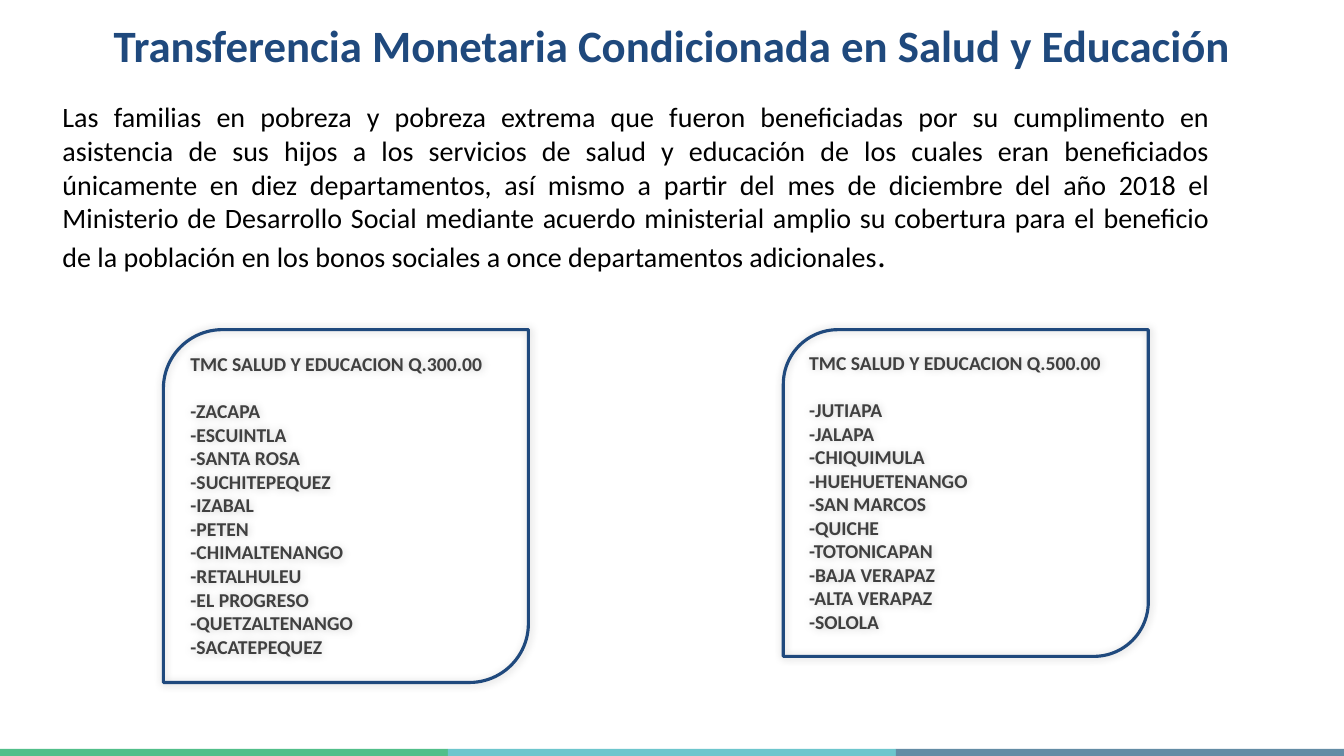
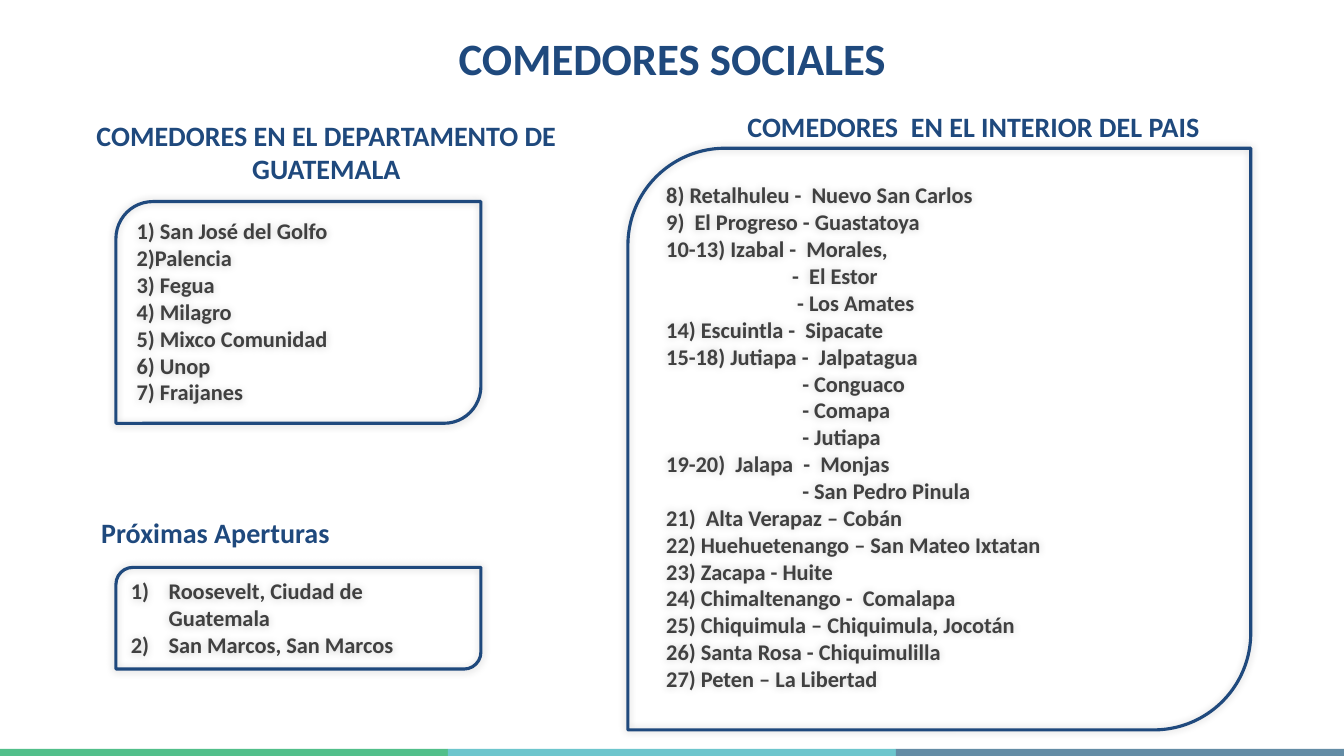
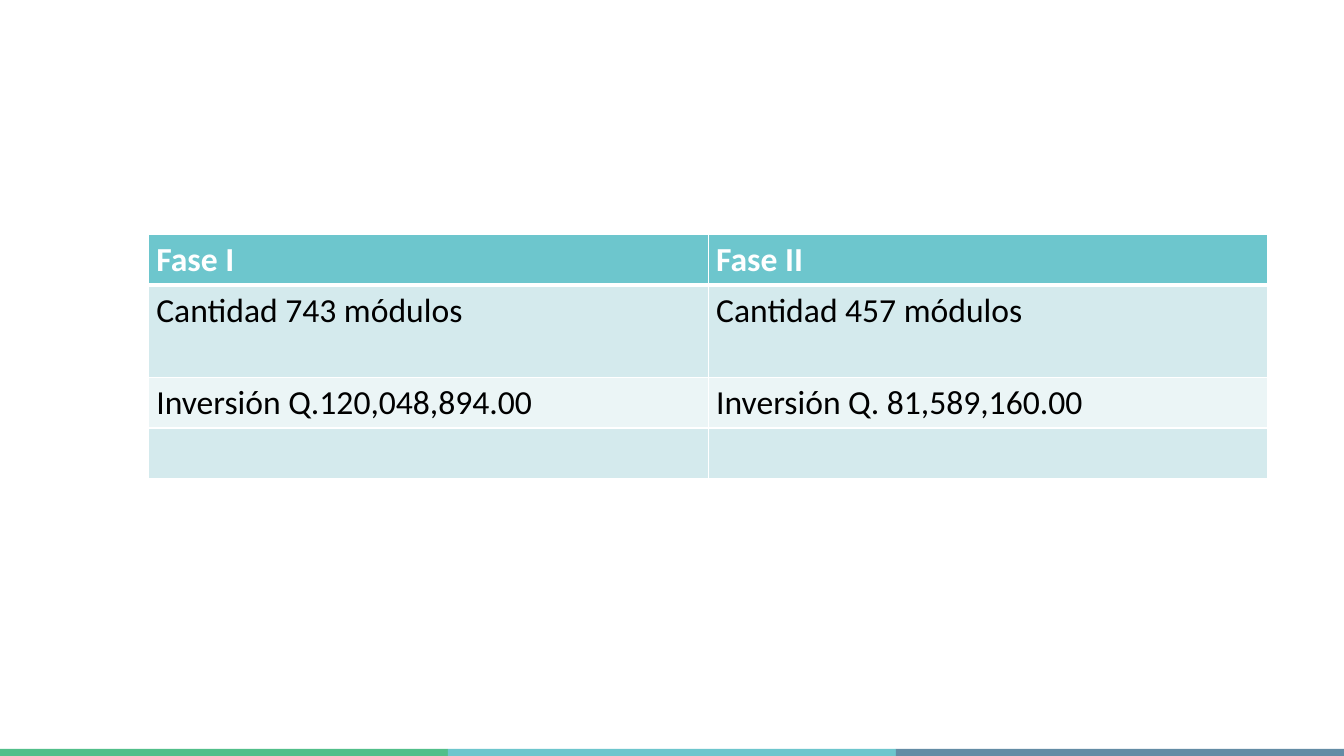
import dataclasses

import pptx
import pptx.dml.color
import pptx.enum.shapes
import pptx.enum.text
import pptx.oxml
import pptx.oxml.ns
import pptx.util
from lxml import etree

ALIGN = pptx.enum.text.PP_ALIGN
ANCHOR = pptx.enum.text.MSO_ANCHOR
SHAPE = pptx.enum.shapes.MSO_SHAPE
COLUMNS, ROWS = 32, 18
WIDTH, HEIGHT = pptx.util.Inches(13.33), pptx.util.Inches(7.5)


@dataclasses.dataclass(frozen=True)
class Theme:
    font: str = "Calibri"
    navy: str = "1F497D"
    grey: str = "404040"
    black: str = "000000"
    white: str = "FFFFFF"
    teal: str = "6DC6CD"
    bands: tuple = ("52BF8A", "6DC6CD", "638CA5")
    table_rows: tuple = ("D4EAED", "EBF5F6")
    title: int = 32
    table: int = 24
    body: int = 20
    item: int = 16
    small_item: int = 14
    outline: float = 2.25


def rgb(color):
    return pptx.dml.color.RGBColor.from_string(color)


def across(columns):
    return round(columns * WIDTH / COLUMNS)


def down(rows):
    return round(rows * HEIGHT / ROWS)


def place(left, top, width, height):
    return across(left), down(top), across(width), down(height)


def add_child(parent, tag, **attributes):
    child = etree.SubElement(parent, pptx.oxml.ns.qn(tag))
    for name, value in attributes.items():
        child.set(name, str(value))
    return child


def next_para(frame):
    """Return the first paragraph while it is unused, else a new one."""
    return frame.add_paragraph() if frame.text else frame.paragraphs[0]


class Deck:
    def __init__(self, theme):
        self.theme = theme
        self.file = pptx.Presentation()
        self.file.slide_width, self.file.slide_height = WIDTH, HEIGHT
        self.page = None

    def add_text(self, para, text, size, color, bold=False, align=ALIGN.LEFT):
        para.alignment = align
        span = para.add_run()
        span.text = text
        span.font.name = self.theme.font
        span.font.size = pptx.util.Pt(size)
        span.font.bold = bold
        span.font.color.rgb = rgb(color)

    def new_page(self):
        self.page = self.file.slides.add_slide(self.file.slide_layouts[6])
        band_width = COLUMNS / len(self.theme.bands)
        for number, color in enumerate(self.theme.bands):
            band = self.page.shapes.add_shape(
                SHAPE.RECTANGLE, *place(number * band_width, 17.83, band_width, 0.17))
            band.shadow.inherit = False
            band.fill.solid()
            band.fill.fore_color.rgb = rgb(color)
            band.line.fill.background()

    def text_box(self, *area):
        frame = self.page.shapes.add_textbox(*place(*area)).text_frame
        frame.word_wrap = True
        return frame

    def heading(self, text, *area, size=None):
        frame = self.text_box(*area)
        frame.vertical_anchor = ANCHOR.MIDDLE
        frame.margin_left = frame.margin_right = 0
        frame.margin_top = frame.margin_bottom = 0
        self.add_text(frame.paragraphs[0], text, size or self.theme.body,
                      self.theme.navy, bold=True, align=ALIGN.CENTER)

    def title(self, text, height):
        self.heading(text, 0.7, 0.67, 30.62, height, size=self.theme.title)

    def body(self, text, ending, *area):
        """Justified paragraph whose ending is set larger."""
        para = self.text_box(*area).paragraphs[0]
        for part, size in ((text, self.theme.body), (ending, self.theme.table)):
            self.add_text(para, part, size, self.theme.black, align=ALIGN.JUSTIFY)

    def card(self, items, *area, size=None, numbered=False, lead=None):
        """Outlined list; an item may be a pair of text and indent in columns."""
        card = self.page.shapes.add_shape(
            SHAPE.ROUND_2_DIAG_RECTANGLE, *place(*area))
        card.fill.background()
        card.line.color.rgb = rgb(self.theme.navy)
        card.line.width = pptx.util.Pt(self.theme.outline)
        card.shadow.inherit = False
        effects = card._element.spPr.find(pptx.oxml.ns.qn("a:effectLst"))
        shadow = add_child(effects, "a:outerShdw", blurRad=pptx.util.Pt(6), dist=0,
                           dir=315 * 60000, algn="tl", rotWithShape=0)
        add_child(add_child(shadow, "a:srgbClr", val=self.theme.black),
                  "a:alpha", val=20000)
        frame = card.text_frame
        frame.word_wrap = True
        frame.vertical_anchor = ANCHOR.TOP
        frame.auto_size = pptx.enum.text.MSO_AUTO_SIZE.SHAPE_TO_FIT_TEXT
        style = dict(size=size or self.theme.item, color=self.theme.grey, bold=True)
        if lead:
            para = next_para(frame)
            para.space_after = pptx.util.Pt(17)
            self.add_text(para, lead, **style)
        for item in items:
            text, indent = item if isinstance(item, tuple) else (item, 0)
            para = next_para(frame)
            self.add_text(para, text, **style)
            settings = para._p.get_or_add_pPr()
            if numbered:
                settings.set("marL", str(across(0.9)))
                settings.set("indent", str(-across(0.9)))
                add_child(settings, "a:buAutoNum", type="arabicParenR")
            elif indent:
                settings.set("marL", str(across(indent)))

    def cell_borders(self, cell, top, bottom):
        settings = cell._tc.get_or_add_tcPr()
        for tag, points in (("a:lnL", 1), ("a:lnR", 1), ("a:lnT", top), ("a:lnB", bottom)):
            line = add_child(settings, tag, w=pptx.util.Pt(points))
            add_child(add_child(line, "a:solidFill"), "a:srgbClr", val=self.theme.white)

    def table(self, rows, heights, left, top, width):
        table = self.page.shapes.add_table(
            len(rows), len(rows[0]), *place(left, top, width, sum(heights))).table
        for row_number, texts in enumerate(rows):
            header = row_number == 0
            table.rows[row_number].height = down(heights[row_number])
            fill = self.theme.teal if header else self.theme.table_rows[(row_number - 1) % 2]
            for column, text in enumerate(texts):
                cell = table.cell(row_number, column)
                cell.margin_left = cell.margin_right = pptx.util.Inches(0.08)
                self.cell_borders(cell, top=3 if row_number == 1 else 1,
                                  bottom=3 if header else 1)
                cell.fill.solid()
                cell.fill.fore_color.rgb = rgb(fill)
                if text:
                    self.add_text(cell.text_frame.paragraphs[0], text, self.theme.table,
                                  self.theme.white if header else self.theme.black,
                                  bold=header)


def transfers_page(deck):
    deck.new_page()
    deck.title("Transferencia Monetaria Condicionada en Salud y Educación", 0.77)
    deck.body(
        "Las familias en pobreza y pobreza extrema que fueron beneficiadas por su "
        "cumplimento en asistencia de sus hijos a los servicios de salud y educación de "
        "los cuales eran beneficiados únicamente en diez departamentos, así mismo a "
        "partir del mes de diciembre del año 2018 el Ministerio de Desarrollo Social "
        "mediante acuerdo ministerial amplio su cobertura para el beneficio de la "
        "población en los bonos sociales a once departamentos adicionales",
        ".", 1.25, 2.26, 27.79, 4.44)
    groups = (
        (3.89, 8.4, "300.00", (
            "ZACAPA", "ESCUINTLA", "SANTA ROSA", "SUCHITEPEQUEZ", "IZABAL", "PETEN",
            "CHIMALTENANGO", "RETALHULEU", "EL PROGRESO", "QUETZALTENANGO",
            "SACATEPEQUEZ")),
        (18.65, 7.78, "500.00", (
            "JUTIAPA", "JALAPA", "CHIQUIMULA", "HUEHUETENANGO", "SAN MARCOS", "QUICHE",
            "TOTONICAPAN", "BAJA VERAPAZ", "ALTA VERAPAZ", "SOLOLA")),
    )
    for left, height, amount, departments in groups:
        deck.card([f"-{name}" for name in departments], left, 7.85, 8.69, height,
                  size=deck.theme.small_item, lead=f"TMC SALUD Y EDUCACION Q.{amount}")


def canteens_page(deck):
    deck.new_page()
    deck.title("COMEDORES SOCIALES", 1.39)
    deck.heading("COMEDORES EN EL DEPARTAMENTO DE GUATEMALA", 1.82, 2.76, 11.9, 1.7)
    deck.card(
        ("1) San José del Golfo", "2)Palencia", "3) Fegua", "4) Milagro",
         "5) Mixco Comunidad", "6) Unop", "7) Fraijanes"),
        2.76, 4.8, 8.69, 5.28)
    deck.heading("COMEDORES  EN EL INTERIOR DEL PAIS", 17.23, 2.16, 11.9, 1.7)
    deck.card(
        ("8) Retalhuleu -  Nuevo San Carlos", "9)  El Progreso - Guastatoya",
         "10-13) Izabal -  Morales,", ("-  El Estor", 3), ("- Los Amates", 3.12),
         "14) Escuintla -  Sipacate", "15-18) Jutiapa -  Jalpatagua",
         ("- Conguaco", 3.24), ("- Comapa", 3.24), ("- Jutiapa", 3.24),
         "19-20)  Jalapa  -  Monjas", ("- San Pedro Pinula", 3.24),
         "21)  Alta Verapaz – Cobán", "22) Huehuetenango – San Mateo Ixtatan",
         "23) Zacapa - Huite", "24) Chimaltenango -  Comalapa",
         "25) Chiquimula – Chiquimula, Jocotán", "26) Santa Rosa - Chiquimulilla",
         "27) Peten – La Libertad"),
        14.95, 3.53, 14.83, 13.85)
    deck.card(("Roosevelt, Ciudad de Guatemala", "San Marcos, San Marcos"),
              2.76, 13.51, 8.69, 2.42, numbered=True)
    deck.heading("Próximas Aperturas", 1.82, 11.83, 6.62, 1.7)


def phases_page(deck):
    deck.new_page()
    deck.table(
        (("Fase I", "Fase II"),
         ("Cantidad 743 módulos", "Cantidad 457 módulos"),
         ("Inversión Q.120,048,894.00", "Inversión Q. 81,589,160.00"),
         ("", "")),
        (1.2, 2.2, 1.2, 1.2), 3.53, 5.59, 26.66)


def main():
    deck = Deck(Theme())
    transfers_page(deck)
    canteens_page(deck)
    phases_page(deck)
    deck.file.save("out.pptx")


if __name__ == "__main__":
    main()
